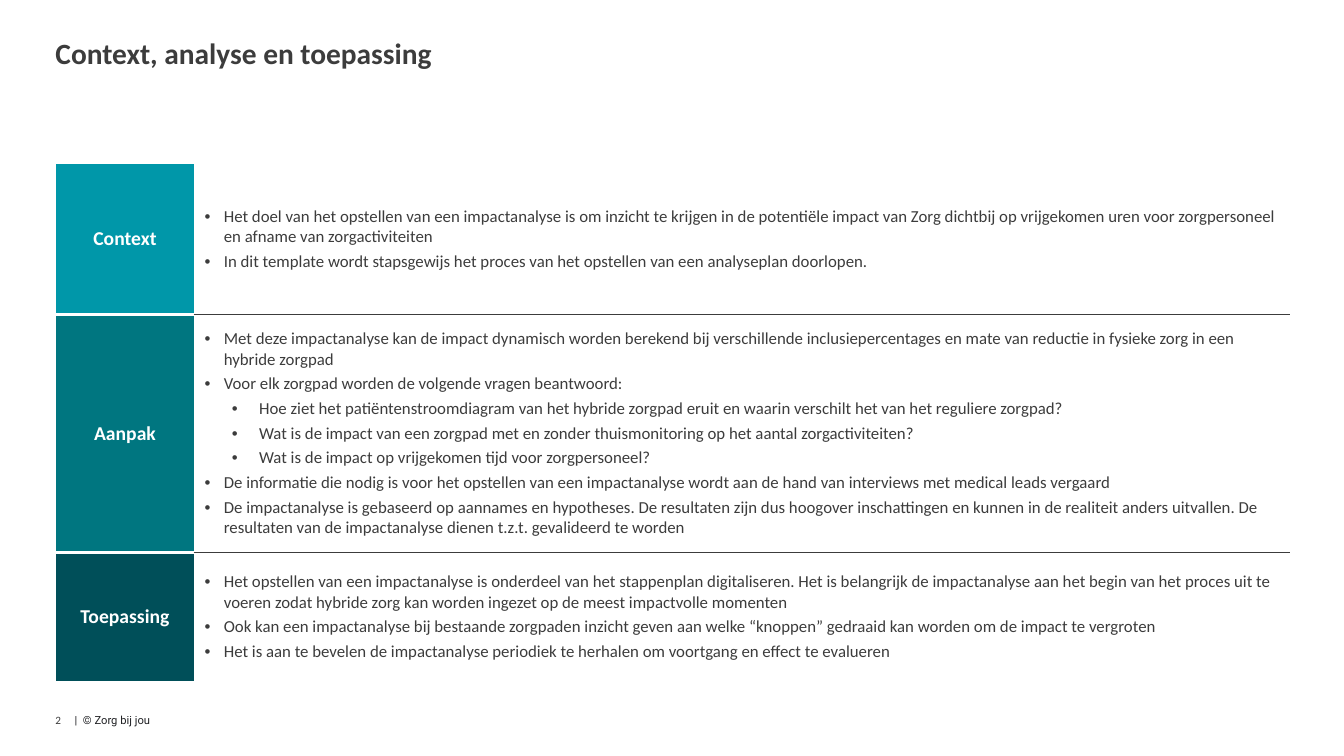
from lxml.etree import SubElement
from pptx import Presentation
from pptx.dml.color import RGBColor
from pptx.enum.text import MSO_ANCHOR, PP_ALIGN
from pptx.oxml.ns import qn
from pptx.util import Inches, Pt

COLORS = {
    "text": "3C3C3C", "white": "FFFFFF", "footer": "202124",
    "context": "0097A9", "aanpak": "007680", "toepassing": "004F59",
}
COLUMN_WIDTHS = (1.38, 10.86)
BULLET_INDENTS = ((0.19, -0.19), (0.54, -0.27))
ROWS = [
    ("Context", "context", 1.5, [
        (0, "Het doel van het opstellen van een impactanalyse is om inzicht te krijgen in de potentiële impact van Zorg dichtbij op vrijgekomen uren voor zorgpersoneel en afname van zorgactiviteiten"),
        (0, "In dit template wordt stapsgewijs het proces van het opstellen van een analyseplan doorlopen."),
    ]),
    ("Aanpak", "aanpak", 2.36, [
        (0, "Met deze impactanalyse kan de impact dynamisch worden berekend bij verschillende inclusiepercentages en mate van reductie in fysieke zorg in een hybride zorgpad"),
        (0, "Voor elk zorgpad worden de volgende vragen beantwoord:"),
        (1, "Hoe ziet het patiëntenstroomdiagram van het hybride zorgpad eruit en waarin verschilt het van het reguliere zorgpad?"),
        (1, "Wat is de impact van een zorgpad met en zonder thuismonitoring op het aantal zorgactiviteiten?"),
        (1, "Wat is de impact op vrijgekomen tijd voor zorgpersoneel?"),
        (0, "De informatie die nodig is voor het opstellen van een impactanalyse wordt aan de hand van interviews met medical leads vergaard"),
        (0, "De impactanalyse is gebaseerd op aannames en hypotheses. De resultaten zijn dus hoogover inschattingen en kunnen in de realiteit anders uitvallen. De resultaten van de impactanalyse dienen t.z.t. gevalideerd te worden"),
    ]),
    ("Toepassing", "toepassing", 1.28, [
        (0, "Het opstellen van een impactanalyse is onderdeel van het stappenplan digitaliseren. Het is belangrijk de impactanalyse aan het begin van het proces uit te voeren zodat hybride zorg kan worden ingezet op de meest impactvolle momenten"),
        (0, "Ook kan een impactanalyse bij bestaande zorgpaden inzicht geven aan welke “knoppen” gedraaid kan worden om de impact te vergroten"),
        (0, "Het is aan te bevelen de impactanalyse periodiek te herhalen om voortgang en effect te evalueren"),
    ]),
]


def add_text(tf, text, size=12, color="text", bold=False, font="Calibri",
             align=PP_ALIGN.LEFT, level=None):
    """Add one formatted paragraph, bulleted when a level is given."""
    first = not tf.text
    p = tf.paragraphs[0] if first else tf.add_paragraph()
    p.alignment = align
    p.space_before = Pt(0 if first else 3)
    if level is not None:
        p.level = level
        pPr = p._p.get_or_add_pPr()
        left, indent = BULLET_INDENTS[level]
        pPr.set("marL", str(Inches(left)))
        pPr.set("indent", str(Inches(indent)))
        SubElement(pPr, qn("a:buFont"), typeface="Arial")
        SubElement(pPr, qn("a:buChar"), char="•")
    r = p.add_run()
    r.text = text
    r.font.name = font
    r.font.size = Pt(size)
    r.font.bold = bold
    r.font.color.rgb = RGBColor.from_string(COLORS[color])


def clear_margins(tf):
    """Remove the inner margins of a text frame."""
    tf.margin_left = tf.margin_right = tf.margin_top = tf.margin_bottom = 0


def style_cell(cell, fill, top, bottom):
    """Set borders, fill and vertical centring of a table cell."""
    tcPr = cell._tc.get_or_add_tcPr()
    sides = {"L": ("white", 1), "R": ("white", 1), "T": top, "B": bottom}
    for side, (color, width) in sides.items():
        ln = SubElement(tcPr, qn(f"a:ln{side}"), w=str(Pt(width)))
        line_fill = SubElement(ln, qn("a:solidFill"))
        SubElement(line_fill, qn("a:srgbClr"), val=COLORS[color])
    cell.fill.solid()
    cell.fill.fore_color.rgb = RGBColor.from_string(COLORS[fill])
    cell.vertical_anchor = MSO_ANCHOR.MIDDLE


def build_title(s, left, top, width, height):
    """Place the slide title in its placeholder."""
    sp = s.shapes.title
    sp.left, sp.top, sp.width, sp.height = map(Inches, (left, top, width, height))
    tf = sp.text_frame
    clear_margins(tf)
    tf.vertical_anchor = MSO_ANCHOR.TOP
    add_text(tf, "Context, analyse en toepassing", size=21, bold=True)


def build_table(s, left, top, width, height):
    """Place the table of labelled topics with bulleted explanations."""
    box = map(Inches, (left, top, width, height))
    table = s.shapes.add_table(len(ROWS), len(COLUMN_WIDTHS), *box).table
    table.first_row = table.horz_banding = False
    for column, column_width in zip(table.columns, COLUMN_WIDTHS):
        column.width = Inches(column_width)
    edge, gap, rule = ("white", 1), ("white", 3), ("text", 1)
    for i, (label, fill, row_height, bullets) in enumerate(ROWS):
        table.rows[i].height = Inches(row_height)
        is_first, is_last = i == 0, i == len(ROWS) - 1
        label_cell, body_cell = table.cell(i, 0), table.cell(i, 1)
        style_cell(label_cell, fill, edge if is_first else gap, edge if is_last else gap)
        style_cell(body_cell, "white", edge if is_first else rule, edge if is_last else rule)
        add_text(label_cell.text_frame, label, size=14, color="white", bold=True,
                 align=PP_ALIGN.CENTER)
        for level, text in bullets:
            add_text(body_cell.text_frame, text, level=level)


def build_footer(s, left, top, width, height):
    """Place the page number and the copyright line."""
    parts = ((0, 0.19, "2", "Calibri", "text"),
             (0.19, width - 0.19, "|  © Zorg bij jou", "Roboto", "footer"))
    for offset, part_width, text, font, color in parts:
        box = map(Inches, (left + offset, top, part_width, height))
        tf = s.shapes.add_textbox(*box).text_frame
        clear_margins(tf)
        tf.word_wrap = True
        add_text(tf, text, size=8, color=color, font=font)


def main():
    """Build and save the presentation."""
    prs = Presentation()
    prs.slide_width, prs.slide_height = Inches(13.33), Inches(7.5)
    s = prs.slides.add_slide(prs.slide_layouts[5])
    build_title(s, 0.55, 0.35, 12.24, 0.37)
    build_table(s, 0.55, 1.62, 12.24, 5.14)
    build_footer(s, 0.55, 7.08, 6.05, 0.13)
    prs.save("out.pptx")


if __name__ == "__main__":
    main()
